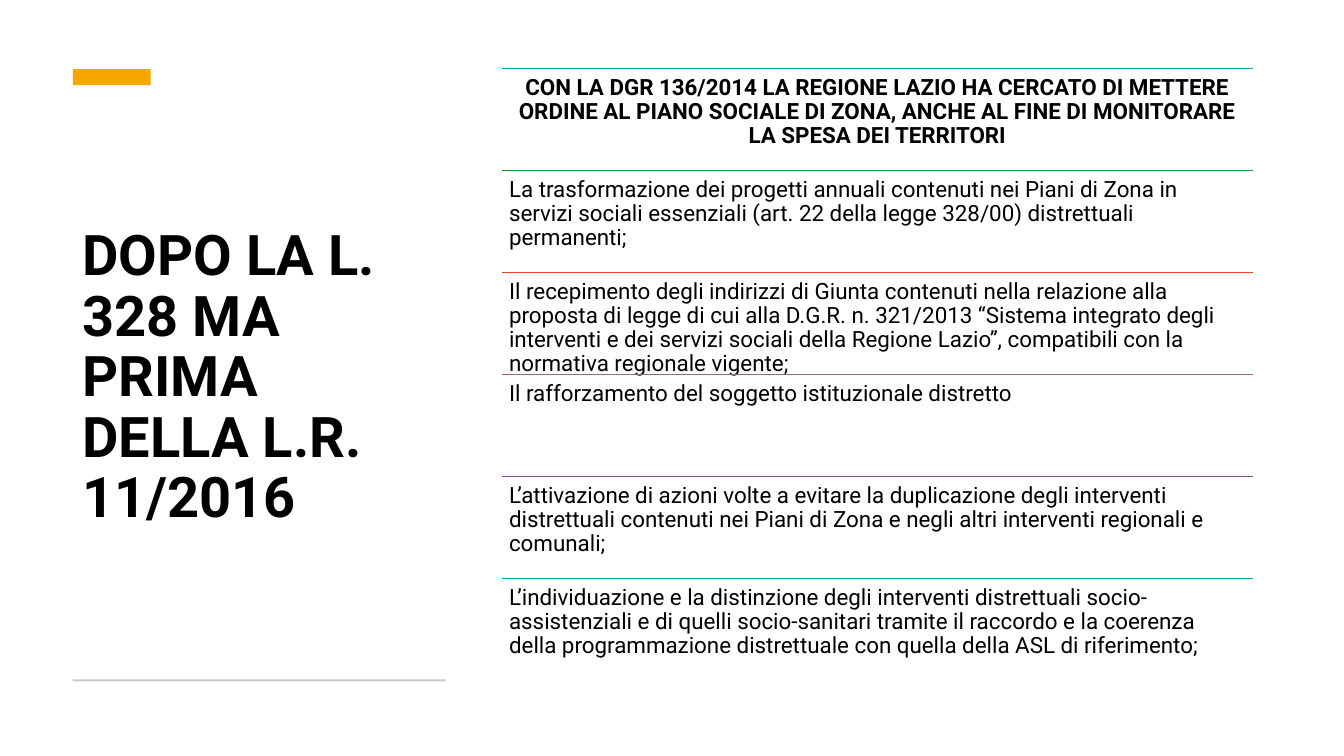
from dataclasses import dataclass

from lxml import etree
from pptx import Presentation
from pptx import util as u
from pptx.dml.color import RGBColor
from pptx.enum import shapes, text
from pptx.oxml.ns import qn


@dataclass(frozen=True)
class Theme:
    font: str = "Roboto"
    title_size: int = 40
    body_size: int = 16
    ink: str = "000000"
    accent: str = "F5A700"
    footer_rule: str = "C9C9C9"
    row_rules: tuple = ("00A5AB", "09963B", "E64823", "9C6A6A", "824F8C", "00A5AB")


theme = Theme()


def add_text(container, box, content, size, bold, margins):
    shape = container.add_textbox(*map(u.Cm, box))
    frame = shape.text_frame
    frame.word_wrap = True
    frame.margin_left = frame.margin_right = u.Cm(margins[0])
    frame.margin_top = frame.margin_bottom = u.Cm(margins[1])
    frame.text = content
    paragraph = frame.paragraphs[0]
    paragraph.line_spacing = 0.9
    for run in paragraph.runs:
        run.font.name = theme.font
        run.font.size = u.Pt(size)
        run.font.bold = bold
        run.font.color.rgb = RGBColor.from_string(theme.ink)
    return frame


presentation = Presentation()
presentation.slide_width = u.Cm(33.87)
presentation.slide_height = u.Cm(19.05)
slide = presentation.slides.add_slide(presentation.slide_layouts[6])

title = add_text(
    slide.shapes,
    (1.83, 2.67, 9.4, 13.74),
    "DOPO LA L. 328 MA\vPRIMA DELLA L.R. 11/2016",
    theme.title_size,
    True,
    (0.25, 0.13),
)
title.vertical_anchor = text.MSO_ANCHOR.MIDDLE

bars = [
    ((1.84, 1.74, 1.96, 0.41), theme.accent),
    ((1.83, 17.12, 9.4, 0.05), theme.footer_rule),
]
for box, color in bars:
    bar = slide.shapes.add_shape(shapes.MSO_SHAPE.RECTANGLE, *map(u.Cm, box))
    bar.shadow.inherit = False
    bar.fill.solid()
    bar.fill.fore_color.rgb = RGBColor.from_string(color)
    bar.line.fill.background()

rows = [
    "CON LA DGR 136/2014 LA REGIONE LAZIO HA CERCATO DI METTERE ORDINE AL PIANO SOCIALE DI ZONA, "
    "ANCHE AL FINE DI MONITORARE LA SPESA DEI TERRITORI",
    "La trasformazione dei progetti annuali contenuti nei Piani di Zona in servizi sociali essenziali "
    "(art. 22 della legge 328/00) distrettuali permanenti;",
    "Il recepimento degli indirizzi di Giunta contenuti nella relazione alla proposta di legge di cui alla "
    "D.G.R. n. 321/2013 “Sistema integrato degli interventi e dei servizi sociali della Regione Lazio”, "
    "compatibili con la normativa regionale vigente;",
    "Il rafforzamento del soggetto istituzionale distretto",
    "L’attivazione di azioni volte a evitare la duplicazione degli interventi distrettuali contenuti nei "
    "Piani di Zona e negli altri interventi regionali e comunali;",
    "L’individuazione e la distinzione degli interventi distrettuali socio-assistenziali e di quelli "
    "socio-sanitari tramite il raccordo e la coerenza della programmazione distrettuale con quella della "
    "ASL di riferimento;",
]
left, top, width, row_height = 12.65, 1.73, 18.92, 2.57
row_group = slide.shapes.add_group_shape()
for index, (content, color) in enumerate(zip(rows, theme.row_rules)):
    row_top = top + index * row_height
    rule = row_group.shapes.add_connector(
        shapes.MSO_CONNECTOR.STRAIGHT,
        u.Cm(left), u.Cm(row_top), u.Cm(left + width), u.Cm(row_top),
    )
    rule.line.color.rgb = RGBColor.from_string(color)
    rule.line.width = u.Pt(1)
    etree.SubElement(rule._element.spPr, qn("a:effectLst"))

    is_heading = index == 0
    frame = add_text(
        row_group.shapes,
        (left, row_top, width, row_height),
        content,
        theme.body_size,
        is_heading,
        (0.18, 0.18),
    )
    if is_heading:
        frame.paragraphs[0].alignment = text.PP_ALIGN.CENTER

presentation.save("out.pptx")
